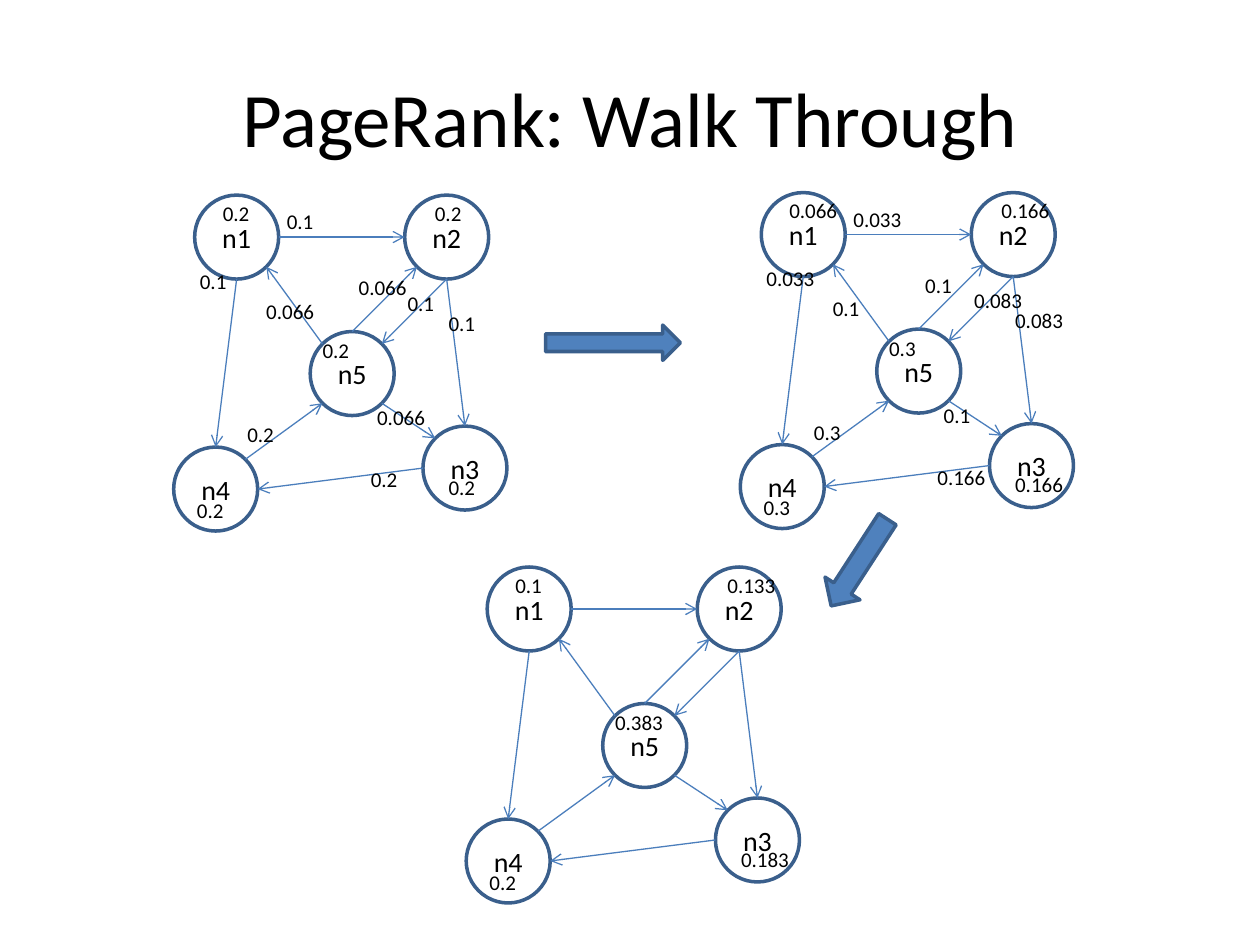
from math import sqrt

from lxml.etree import SubElement
from pptx import Presentation
from pptx.dml.color import RGBColor
from pptx.enum.shapes import MSO_CONNECTOR, MSO_SHAPE
from pptx.enum.text import MSO_ANCHOR, MSO_AUTO_SIZE, PP_ALIGN
from pptx.oxml.ns import qn
from pptx.util import Inches, Pt

THEME = {
    "font": "Calibri",
    "text": RGBColor.from_string("000000"),
    "node": RGBColor.from_string("FFFFFF"),
    "arrow": RGBColor.from_string("4F81BD"),
    "outline": RGBColor.from_string("3A5F8C"),
    "link": RGBColor.from_string("4B7EBC"),
    "title_size": Pt(44), "node_size": Pt(16), "rank_size": Pt(12),
    "outline_width": Pt(2), "link_width": Pt(0.75),
}

prs = Presentation()
prs.slide_width, prs.slide_height = Inches(10), Inches(7.5)
CELL = prs.slide_width / 60  # square grid: 60 columns by 45 rows


def write(shape, text, size, align, **frame_format):
    frame = shape.text_frame
    for name, value in frame_format.items():
        setattr(frame, name, value)
    paragraph = frame.paragraphs[0]
    paragraph.alignment = align
    run = paragraph.add_run()
    run.text = text
    for name, value in {"name": THEME["font"], "size": size}.items():
        setattr(run.font, name, value)
    run.font.color.rgb = THEME["text"]


def add_block(shapes, preset, box, fill):
    block = shapes.add_shape(preset, *(round(v * CELL) for v in box))
    block.shadow.inherit = False
    block.fill.solid()
    block.fill.fore_color.rgb = fill
    block.line.color.rgb = THEME["outline"]
    block.line.width = THEME["outline_width"]
    return block


slide = prs.slides.add_slide(prs.slide_layouts[5])

# Title
title = slide.shapes.title
title_box = {"left": 3, "top": 1.8, "width": 54, "height": 7.5}
for name, cells in title_box.items():
    setattr(title, name, round(cells * CELL))
write(title, "PageRank: Walk Through", THEME["title_size"], PP_ALIGN.CENTER,
      vertical_anchor=MSO_ANCHOR.MIDDLE)

# Graph layout in grid cells, from the graph's own left top corner
DIAMETER = 4
NODES = {"n1": (1, 0), "n2": (11, 0), "n3": (11.87, 11),
         "n4": (0, 12), "n5": (6.5, 6.5)}

# The eight connection sites of a circle, counter-clockwise from the top
D = 1 / sqrt(2)
SITES = [(0, -1), (-D, -D), (-1, 0), (-D, D), (0, 1), (D, D), (1, 0), (D, -D)]
LINKS = [("n1", 6, "n2", 2), ("n2", 4, "n3", 0), ("n3", 2, "n4", 6),
         ("n1", 4, "n4", 0), ("n5", 0, "n2", 3), ("n2", 4, "n5", 7),
         ("n5", 1, "n1", 5), ("n5", 5, "n3", 1), ("n4", 7, "n5", 3)]

# Label places: first the nodes' ranks, then the shares passed along links
RANK_PLACES = [(1.75, -0.05), (11.85, -0.05), (12.5, 13), (6.5, 6.5), (0.52, 14.1)]
SHARE_PLACES = [(4.8, 0.36), (0.66, 3.2), (8.8, 12.65), (12.5, 5.2), (10.55, 4.25),
                (2.92, 10.5), (3.82, 4.62), (9.1, 9.7), (8.22, 3.5)]
LABEL_WIDTHS = {3: 2.64, 5: 3.78}  # by number of characters
LABEL_HEIGHT = 1.82

ITERATIONS = [
    ((8.27, 9.29), "0.2 0.2 0.2 0.2 0.2",
     "0.1 0.1 0.2 0.1 0.1 0.2 0.066 0.066 0.066"),
    ((35.25, 9.17), "0.066 0.166 0.166 0.3 0.3",
     "0.033 0.033 0.166 0.083 0.083 0.3 0.1 0.1 0.1"),
    ((22.2, 27), "0.1 0.133 0.183 0.383 0.2", ""),
]

for (left, top), ranks, shares in ITERATIONS:
    graph = slide.shapes.add_group_shape().shapes

    # Nodes
    circles, centres = {}, {}
    for node, (x, y) in NODES.items():
        circle = add_block(graph, MSO_SHAPE.OVAL,
                           (left + x, top + y, DIAMETER, DIAMETER), THEME["node"])
        write(circle, node, THEME["node_size"], PP_ALIGN.CENTER,
              vertical_anchor=MSO_ANCHOR.MIDDLE)
        circles[node] = circle
        centres[node] = (left + x + DIAMETER / 2, top + y + DIAMETER / 2)

    # Links, joined to the circles' connection sites
    for source, source_site, target, target_site in LINKS:
        ends = [(source, source_site), (target, target_site)]
        points = [round((centre + DIAMETER / 2 * step) * CELL)
                  for node, site in ends
                  for centre, step in zip(centres[node], SITES[site])]
        link = graph.add_connector(MSO_CONNECTOR.STRAIGHT, *points)
        link.line.color.rgb = THEME["link"]
        link.line.width = THEME["link_width"]
        SubElement(link.line._get_or_add_ln(), qn("a:tailEnd"), type="arrow")
        SubElement(link._element.spPr, qn("a:effectLst"))
        joints = link._element.nvCxnSpPr.cNvCxnSpPr
        for tag, (node, site) in zip(("a:stCxn", "a:endCxn"), ends):
            SubElement(joints, qn(tag), id=str(circles[node].shape_id), idx=str(site))

    # Ranks and shares
    labels = [*zip(ranks.split(), RANK_PLACES), *zip(shares.split(), SHARE_PLACES)]
    for value, (x, y) in labels:
        box = (left + x, top + y, LABEL_WIDTHS[len(value)], LABEL_HEIGHT)
        label = graph.add_textbox(*(round(v * CELL) for v in box))
        write(label, value, THEME["rank_size"], PP_ALIGN.LEFT,
              word_wrap=False, auto_size=MSO_AUTO_SIZE.SHAPE_TO_FIT_TEXT)

# Block arrows from one iteration to the next
STEPS = [(MSO_SHAPE.RIGHT_ARROW, (25.98, 15.48, 6.42, 1.68), 0),
         (MSO_SHAPE.LEFT_ARROW, (38.46, 25.8, 4.92, 1.98), 303)]
for preset, box, angle in STEPS:
    step_arrow = add_block(slide.shapes, preset, box, THEME["arrow"])
    step_arrow.rotation = angle

prs.save("out.pptx")
